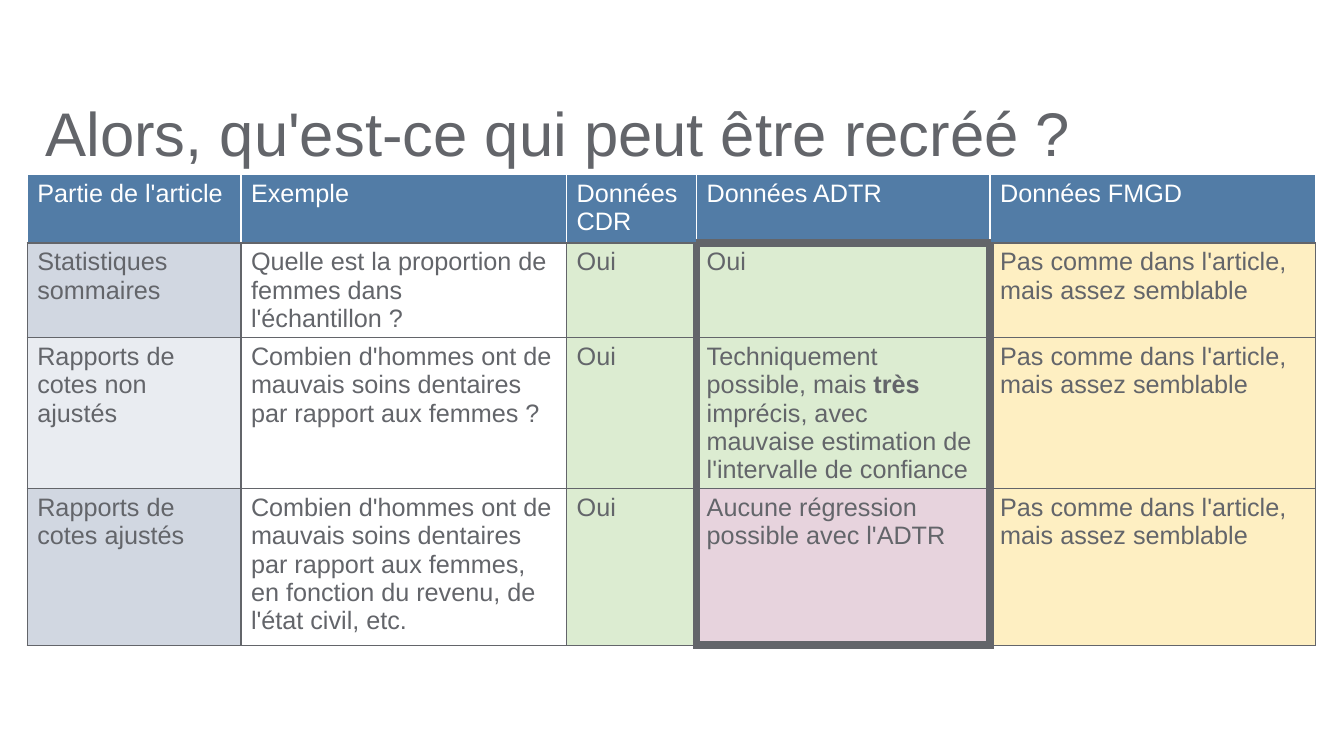
from lxml import etree
from pptx import Presentation
from pptx.dml.color import RGBColor
from pptx.enum.text import MSO_ANCHOR, MSO_AUTO_SIZE, PP_ALIGN
from pptx.oxml.ns import qn
from pptx.util import Inches, Pt

LEFT = PP_ALIGN.LEFT
MIDDLE = MSO_ANCHOR.MIDDLE
NO_FIT = MSO_AUTO_SIZE.NONE

GREY = RGBColor(0x63, 0x65, 0x6A)
WHITE = RGBColor(0xFF, 0xFF, 0xFF)
BLUE = RGBColor(0x52, 0x7C, 0xA6)
BAND_DARK = RGBColor(0xD1, 0xD7, 0xE1)
BAND_LIGHT = RGBColor(0xE9, 0xEC, 0xF1)
GREEN = RGBColor(0xDC, 0xEC, 0xD1)
YELLOW = RGBColor(0xFE, 0xEF, 0xC2)
PINK = RGBColor(0xE7, 0xD3, 0xDD)

FONT = "Arial"
THIN, THICK = 1, 6
ADTR = 3
COL_WIDTHS = [2.12, 3.23, 1.29, 2.91, 3.23]
ROW_HEIGHTS = [0.68, 0.68, 1.26, 1.55]
SIMILAR = "Pas comme dans l'article, mais assez semblable"
ROWS = [
    ["Partie de l'article", "Exemple", "Données CDR", "Données ADTR",
     "Données FMGD"],
    ["Statistiques sommaires",
     "Quelle est la proportion de femmes dans l'échantillon ?",
     "Oui", "Oui", SIMILAR],
    ["Rapports de cotes non ajustés",
     "Combien d'hommes ont de mauvais soins dentaires par rapport aux femmes ?",
     "Oui",
     "Techniquement possible, mais **très** imprécis, avec mauvaise "
     "estimation de l'intervalle de confiance",
     SIMILAR],
    ["Rapports de cotes ajustés",
     "Combien d'hommes ont de mauvais soins dentaires par rapport aux femmes, "
     "en fonction du revenu, de l'état civil, etc.",
     "Oui", "Aucune régression possible avec l'ADTR", SIMILAR],
]
LAST_ROW = len(ROWS) - 1


def format_paragraph(p, size, color):
    p.alignment = LEFT
    p.font.name = FONT
    p.font.size = Pt(size)
    p.font.color.rgb = color


def add_title(s, text):
    title = s.shapes.title
    title.left, title.top = Inches(0.35), Inches(0.97)
    title.width, title.height = Inches(12.8), Inches(0.76)
    tf = title.text_frame
    tf.text = text
    tf.word_wrap = True
    tf.auto_size = NO_FIT
    tf.vertical_anchor = MIDDLE
    p = tf.paragraphs[0]
    p.line_spacing = 0.9
    format_paragraph(p, 44, GREY)


def write_cell(cell, text, color):
    p = cell.text_frame.paragraphs[0]
    for i, part in enumerate(text.split("**")):
        r = p.add_run()
        r.text = part
        if i % 2:
            r.font.bold = True
    format_paragraph(p, 18, color)


def cell_fill(row, col):
    if row == 0:
        return BLUE
    if col == 0:
        return BAND_DARK if row % 2 else BAND_LIGHT
    if col == ADTR and row == LAST_ROW:
        return PINK
    return [WHITE, GREEN, GREEN, YELLOW][col - 1]


def cell_borders(row, col):
    if row == 0:
        bottom = THICK if col == ADTR else THIN
        return [(WHITE, THIN)] * 3 + [(GREY, bottom)]
    thick_sides = [
        col in (ADTR, ADTR + 1),
        col in (ADTR - 1, ADTR),
        col == ADTR and row == 1,
        col == ADTR and row == LAST_ROW,
    ]
    return [(GREY, THICK if thick else THIN) for thick in thick_sides]


def set_borders(cell, borders):
    tcPr = cell._tc.get_or_add_tcPr()
    for i, (side, (color, width)) in enumerate(zip("LRTB", borders)):
        ln = etree.Element(qn(f"a:ln{side}"), w=str(Pt(width)))
        fill = etree.SubElement(ln, qn("a:solidFill"))
        etree.SubElement(fill, qn("a:srgbClr"), val=str(color))
        tcPr.insert(i, ln)


def add_comparison_table(s):
    frame = s.shapes.add_table(
        len(ROWS), len(COL_WIDTHS), Inches(0.27), Inches(1.73),
        Inches(sum(COL_WIDTHS)), Inches(sum(ROW_HEIGHTS)))
    table = frame.table
    for column, width in zip(table.columns, COL_WIDTHS):
        column.width = Inches(width)
    for row, height in zip(table.rows, ROW_HEIGHTS):
        row.height = Inches(height)
    for i, texts in enumerate(ROWS):
        for j, text in enumerate(texts):
            cell = table.cell(i, j)
            write_cell(cell, text, GREY if i else WHITE)
            cell.fill.solid()
            cell.fill.fore_color.rgb = cell_fill(i, j)
            set_borders(cell, cell_borders(i, j))
    table.horz_banding = False
    table.first_row = False


def main():
    prs = Presentation()
    prs.slide_width, prs.slide_height = Inches(13.33), Inches(7.5)
    s = prs.slides.add_slide(prs.slide_layouts[5])
    add_title(s, "Alors, qu'est-ce qui peut être recréé ?")
    add_comparison_table(s)
    prs.save("out.pptx")


if __name__ == "__main__":
    main()
